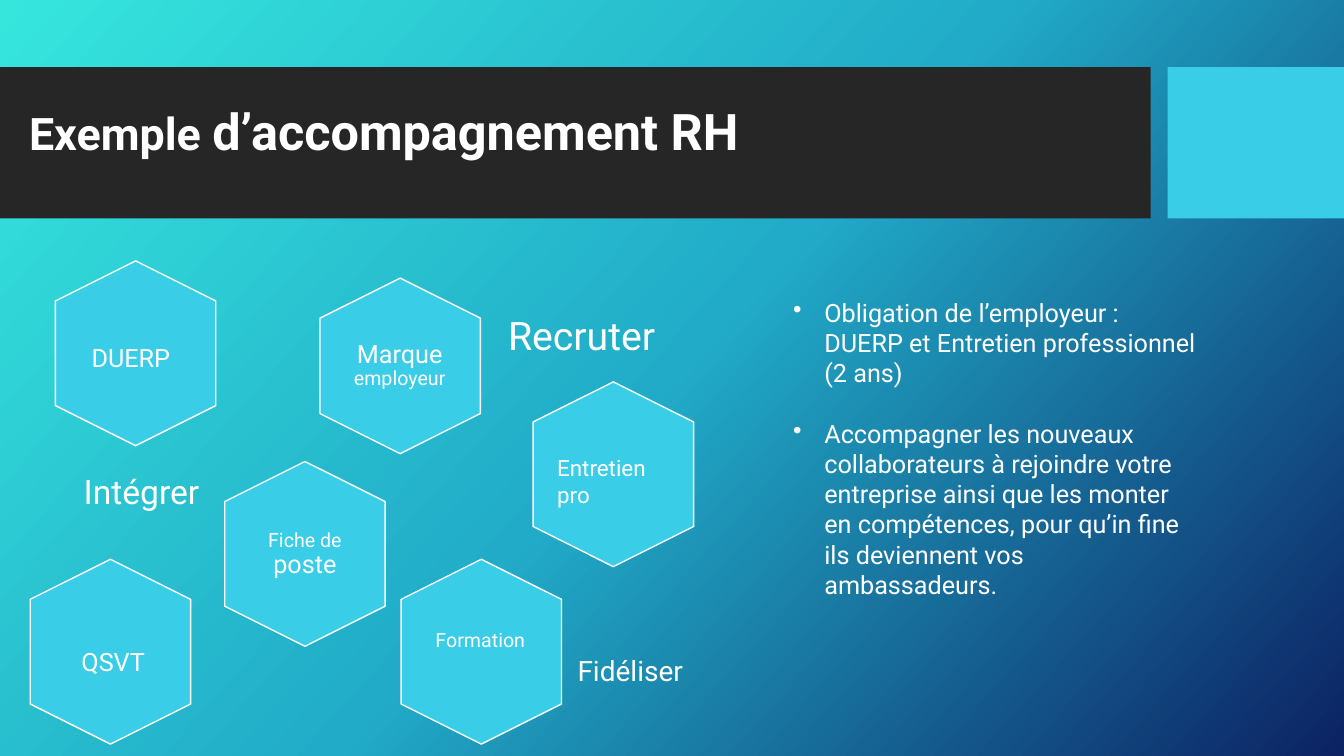
from copy import deepcopy

from lxml import etree
from pptx import Presentation
from pptx.dml.color import RGBColor
from pptx.enum.shapes import MSO_SHAPE
from pptx.enum.text import MSO_ANCHOR, MSO_AUTO_SIZE, PP_ALIGN
from pptx.oxml.ns import qn
from pptx.util import Inches, Pt

RECTANGLE, HEXAGON = MSO_SHAPE.RECTANGLE, MSO_SHAPE.HEXAGON
TOP, MIDDLE = MSO_ANCHOR.TOP, MSO_ANCHOR.MIDDLE
FIXED, GROW = MSO_AUTO_SIZE.NONE, MSO_AUTO_SIZE.SHAPE_TO_FIT_TEXT
LEFT, CENTER, RIGHT = PP_ALIGN.LEFT, PP_ALIGN.CENTER, PP_ALIGN.RIGHT

COLOURS = {
    "band": "262626",
    "accent": "39CDE7",
    "white": "FFFFFF",
    "aqua": "36E6DD",
    "teal": "21ABC8",
    "navy": "0C2263",
}
COLUMNS, ROWS = 160, 90

HEXAGONS = [
    (16.14, 42.06, 22),
    (47.64, 43.56, 20.9),
    (36.3, 65.94, 22),
    (73.02, 56.46, 22),
    (57.3, 77.58, 22),
    (13.14, 77.58, 22),
]
LABELS = [
    ((41.04, 36.48, 13.08, 14.16), [("Marque", 18), (" employeur", 14)], CENTER, 0.84),
    ((29.76, 58.44, 13.08, 15.12), [("Fiche de ", 14), ("poste", 18)], CENTER, 0.72),
    ((50.64, 68.76, 13.08, 15.12), [("Formation", 14)], CENTER, 0.72),
    ((59.04, 33.6, 30.12, 13.2), [("Recruter", 28)], LEFT, 1.44),
    ((2.28, 52.2, 22.64, 13.2), [("Intégrer", 24)], RIGHT, 1.2),
    ((67.8, 73.44, 24.48, 13.2), [("Fidéliser", 20)], LEFT, 0.96),
]
CAPTIONS = [
    ((2.28, 11.28, 121.56, 8.5), [("Exemple ", 32), ("d’accompagnement RH", 36)], True),
    ((9.72, 40.2, 12.84, 4.8), [("DUERP", 18)], False),
    ((65.16, 53.52, 14.76, 7.68), [("Entretien pro", 16)], False),
    ((8.52, 76.32, 15.36, 4.8), [("QSVT", 18)], False),
]
ADVICE = [
    "Obligation de l’employeur : DUERP et Entretien professionnel (2 ans)",
    "Accompagner les nouveaux collaborateurs à rejoindre votre entreprise ainsi que "
    "les monter en compétences, pour qu’in fine ils deviennent vos ambassadeurs.",
]


class SlideBuilder:
    """Draws styled elements on the current slide, in grid columns and rows."""

    def __init__(self, deck):
        self.page = deck.slides.add_slide(deck.slide_layouts[6])
        self.unit = deck.slide_height / ROWS
        self.font = "Roboto"

    def lengths(self, *cells):
        return [round(cell * self.unit) for cell in cells]

    def colour(self, name):
        return RGBColor.from_string(COLOURS[name])

    def apply(self, target, values):
        for name, value in values.items():
            setattr(target, name, value)

    def background(self, names, angle):
        fill = self.page.background.fill
        fill.gradient()
        fill.gradient_angle = angle
        stops = next(self.page.element.iter(qn("a:gsLst")))
        while len(stops) < len(names):
            stops.append(deepcopy(stops[0]))
        for index, (stop, name) in enumerate(zip(fill.gradient_stops, names)):
            stop.position = index / (len(names) - 1)
            stop.color.rgb = self.colour(name)

    def shape(self, kind, area, fill):
        shape = self.page.shapes.add_shape(kind, *self.lengths(*area))
        shape.shadow.inherit = False
        shape.fill.solid()
        shape.fill.fore_color.rgb = self.colour(fill)
        shape.line.fill.background()
        return shape

    def hexagon(self, center_x, center_y, length, breadth=19.1):
        area = (center_x - length / 2, center_y - breadth / 2, length, breadth)
        shape = self.shape(HEXAGON, area, "accent")
        shape.adjustments[0] = 0.25
        shape.rotation = 90
        shape.line.color.rgb = self.colour("white")
        shape.line.width = Pt(1)

    def text(self, area, paragraphs, align=LEFT, inset=None, bold=False, bullet=False):
        box = self.page.shapes.add_textbox(*self.lengths(*area))
        frame = box.text_frame
        label = inset is not None
        self.apply(frame, {
            "word_wrap": True,
            "auto_size": FIXED if label else GROW,
            "vertical_anchor": MIDDLE if label else TOP,
        })
        if label:
            margin = self.lengths(inset)[0]
            sides = ("left", "right", "top", "bottom")
            self.apply(frame, {f"margin_{side}": margin for side in sides})
        for index, spans in enumerate(paragraphs):
            para = frame.add_paragraph() if index else frame.paragraphs[0]
            if bullet:
                self.bullet(para)
            para.alignment = align
            if label:
                para.line_spacing = 0.9
            if index:
                para.space_before = Pt(21.5)
            for words, size in spans:
                span = para.add_run()
                span.text = words
                self.apply(span.font, {"name": self.font, "size": Pt(size), "bold": bold})
                span.font.color.rgb = self.colour("white")

    def bullet(self, para):
        properties = para._p.get_or_add_pPr()
        properties.set("marL", str(Inches(0.31)))
        properties.set("indent", str(-Inches(0.31)))
        etree.SubElement(properties, qn("a:buChar")).set("char", "•")


def main():
    deck = Presentation()
    deck.slide_width, deck.slide_height = Inches(COLUMNS / 12), Inches(ROWS / 12)
    slide = SlideBuilder(deck)
    slide.background(["aqua", "teal", "navy"], 360 - 42)
    slide.shape(RECTANGLE, (0, 8, 137, 18), "band")
    slide.shape(RECTANGLE, (139, 8, 21, 18), "accent")
    for hexagon in HEXAGONS:
        slide.hexagon(*hexagon)
    for area, spans, align, inset in LABELS:
        slide.text(area, [spans], align, inset)
    for area, spans, bold in CAPTIONS:
        slide.text(area, [spans], bold=bold)
    advice = [[(words, 18)] for words in ADVICE]
    slide.text((93.24, 34.8, 50.64, 37.56), advice, bullet=True)
    deck.save("out.pptx")


if __name__ == "__main__":
    main()
